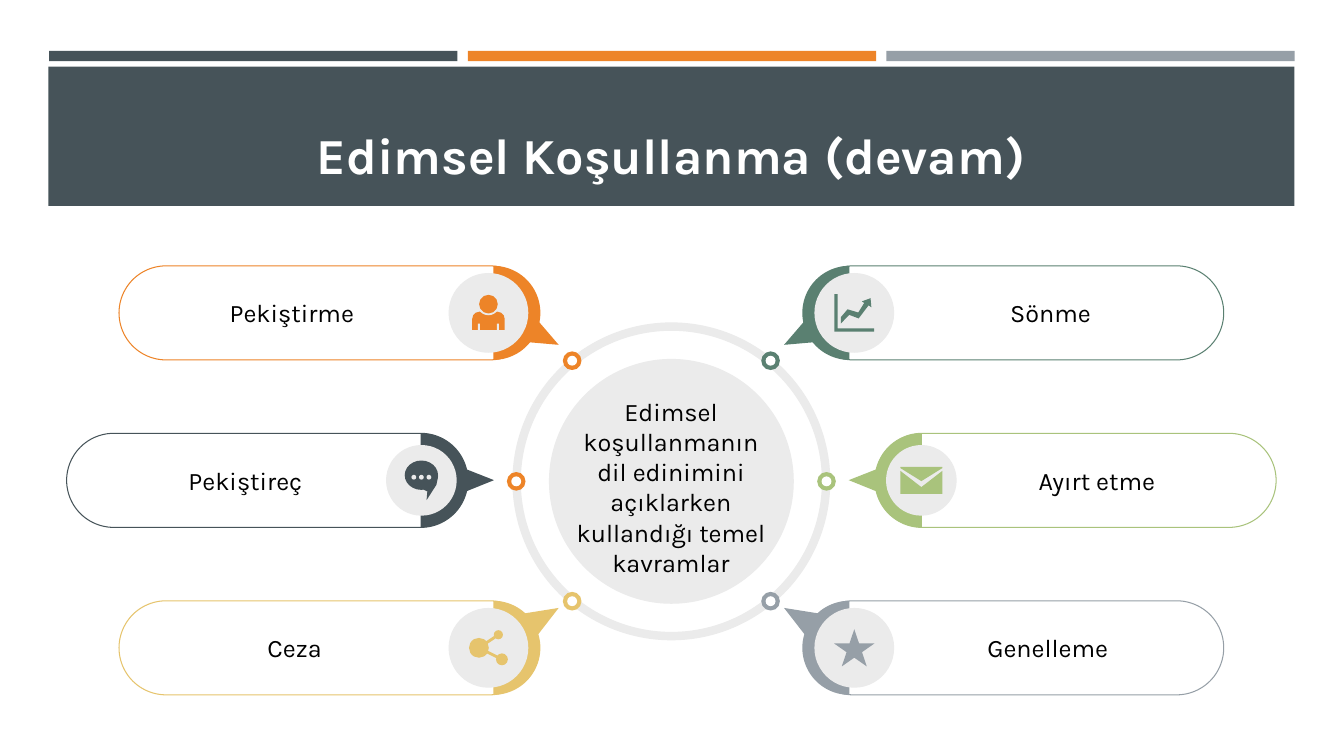
from dataclasses import dataclass

import pptx
import pptx.dml.color
import pptx.enum.shapes
import pptx.enum.text
import pptx.oxml.ns
import pptx.util
from lxml import etree

Cm = pptx.util.Cm
SHAPE = pptx.enum.shapes.MSO_SHAPE
ANCHOR = pptx.enum.text.MSO_ANCHOR


@dataclass(frozen=True)
class Theme:
    font: str = "Karla"
    title_size: int = 36
    body_size: int = 18
    slate: str = "465359"
    orange: str = "ED8428"
    grey: str = "969FA7"
    green: str = "5A8071"
    lime: str = "A9C37C"
    yellow: str = "E6C46D"
    pale: str = "EBEBEB"
    white: str = "FFFFFF"
    black: str = "000000"


THEME = Theme()
AXIS, MIDDLE = 16.92, 12.13  # centre of the ring
PILL_HEIGHT = 2.37

# Distances run outwards from the axis; pointer heights run from the pill top.
ROWS = [
    dict(top=6.7, pill=3.4, width=10.52, cap=3.3, disc=4.61, disc_size=2.01, label=9.56,
         dot=(2.5, 9.09), pointer=[(3.45, 1.28), (2.84, 1.99), (3.76, 1.91)]),
    dict(top=10.92, pill=5.13, width=10.11, cap=5.13, disc=6.3, disc_size=1.78, label=10.73,
         dot=(3.91, MIDDLE), pointer=[(5.46, 0.79), (4.47, 1.18), (5.46, 1.58)]),
    dict(top=15.14, pill=3.4, width=10.52, cap=3.3, disc=4.61, disc_size=2.01, label=9.49,
         dot=(2.5, 15.15), pointer=[(3.78, 0.33), (2.84, 0.18), (3.43, 0.94)]),
]


def rgb(colour):
    return pptx.dml.color.RGBColor.from_string(colour)


def paint(shape, fill=None, line=None, line_width=0.75):
    shape.shadow.inherit = False
    if fill:
        shape.fill.solid()
        shape.fill.fore_color.rgb = rgb(fill)
    else:
        shape.fill.background()
    if line:
        shape.line.color.rgb = rgb(line)
        shape.line.width = pptx.util.Pt(line_width)
    else:
        shape.line.fill.background()


def add_box(slide, preset, left, top, width, height, adjust=(), **colours):
    shape = slide.shapes.add_shape(preset, Cm(left), Cm(top), Cm(width), Cm(height))
    for index, value in enumerate(adjust):
        shape.adjustments[index] = value
    paint(shape, **colours)


def add_centred(slide, preset, x, y, width, height, adjust=(), **colours):
    add_box(slide, preset, x - width / 2, y - height / 2, width, height, adjust, **colours)


def add_circle(slide, x, y, size, **colours):
    add_centred(slide, SHAPE.OVAL, x, y, size, size, **colours)


def add_polygon(slide, x, y, points, colour):
    corners = [(Cm(x + dx), Cm(y + dy)) for dx, dy in points]
    outline = slide.shapes.build_freeform(*corners[0], scale=1.0)
    outline.add_line_segments(corners[1:], close=True)
    paint(outline.convert_to_shape(), fill=colour)


def add_link(slide, start, end, colour):
    link = slide.shapes.add_connector(
        pptx.enum.shapes.MSO_CONNECTOR.STRAIGHT, *(Cm(v) for v in (*start, *end)))
    link.line.color.rgb = rgb(colour)
    link.line.width = pptx.util.Pt(2)
    etree.SubElement(link._element.spPr, pptx.oxml.ns.qn("a:effectLst"))


def add_text(slide, text, left, top, width, height, anchor, colour=THEME.black,
             size=THEME.body_size, bold=False, inset=0.33):
    frame = slide.shapes.add_textbox(Cm(left), Cm(top), Cm(width), Cm(height)).text_frame
    frame_format = dict(word_wrap=True, vertical_anchor=anchor, margin_left=Cm(inset),
                        margin_right=Cm(inset), margin_top=Cm(inset), margin_bottom=Cm(inset))
    for name, value in frame_format.items():
        setattr(frame, name, value)
    paragraph = frame.paragraphs[0]
    paragraph.alignment = pptx.enum.text.PP_ALIGN.CENTER
    run = paragraph.add_run()
    run.text = text
    font_format = dict(name=THEME.font, size=pptx.util.Pt(size), bold=bold)
    for name, value in font_format.items():
        setattr(run.font, name, value)
    run.font.color.rgb = rgb(colour)


# Icons, each drawn around the centre of its disc
def person_icon(slide, x, y, colour):
    add_centred(slide, SHAPE.ROUND_2_SAME_RECTANGLE, x, y + 0.2, 0.82, 0.46, (0.4, 0), fill=colour)
    add_circle(slide, x, y - 0.22, 0.56, fill=THEME.pale)
    add_circle(slide, x, y - 0.22, 0.47, fill=colour)
    for dx in (-0.24, 0.24):
        add_centred(slide, SHAPE.RECTANGLE, x + dx, y + 0.36, 0.05, 0.18, fill=THEME.pale)


def chat_icon(slide, x, y, colour):
    add_centred(slide, SHAPE.OVAL, x, y - 0.13, 0.84, 0.74, fill=colour)
    add_polygon(slide, x, y, [(0.05, 0.23), (0.15, 0.28), (0.13, 0.5), (0.38, 0.11),
                              (0.42, -0.1)], colour)
    for dx in (-0.19, 0, 0.19):
        add_circle(slide, x + dx, y - 0.08, 0.12, fill=THEME.pale)


def share_icon(slide, x, y, colour):
    hub = (x - 0.24, y)
    add_circle(slide, *hub, 0.5, fill=colour)
    for dx, dy, size in ((0.25, -0.33, 0.23), (0.34, 0.29, 0.3)):
        add_link(slide, hub, (x + dx, y + dy), colour)
        add_circle(slide, x + dx, y + dy, size, fill=colour)


def growth_icon(slide, x, y, colour):
    axes = [(-0.5, -0.47), (-0.42, -0.47), (-0.42, 0.39), (0.5, 0.39), (0.5, 0.47), (-0.5, 0.47)]
    arrow = [(0.41, -0.37), (0.19, -0.29), (0.25, -0.25), (0.1, -0.01), (-0.17, -0.09),
             (-0.34, 0.11), (-0.34, 0.27), (-0.13, 0.05), (0.11, 0.14), (0.36, -0.19),
             (0.43, -0.14)]
    for points in (axes, arrow):
        add_polygon(slide, x, y, points, colour)


def envelope_icon(slide, x, y, colour):
    body = [(-0.53, -0.24), (0, 0.17), (0.53, -0.24), (0.53, 0.34), (-0.53, 0.34)]
    flap = [(-0.53, -0.34), (0.53, -0.34), (0.53, -0.31), (0, 0.02), (-0.53, -0.31)]
    for points in (body, flap):
        add_polygon(slide, x, y, points, colour)


def star_icon(slide, x, y, colour):
    add_centred(slide, SHAPE.STAR_5_POINT, x, y, 1.02, 0.94, fill=colour)


def add_concept(slide, side, row, label, colour, dot_colour, draw_icon):
    """Draw one concept; side is -1 left of the axis and 1 right of it."""
    def across(distance):
        return AXIS + side * distance

    top, centre_y = row["top"], row["top"] + PILL_HEIGHT / 2
    dot_x, dot_y = row["dot"]
    for size, fill in ((0.47, dot_colour), (0.25, THEME.white)):
        add_circle(slide, across(dot_x), dot_y, size, fill=fill)
    add_centred(slide, SHAPE.ROUNDED_RECTANGLE, across(row["pill"] + row["width"] / 2), centre_y,
                row["width"], PILL_HEIGHT, (0.5,), line=colour)
    half_turn = (54, 162) if side > 0 else (162, 54)
    add_centred(slide, SHAPE.PIE, across(row["cap"] + PILL_HEIGHT / 2), centre_y,
                PILL_HEIGHT, PILL_HEIGHT, half_turn, fill=colour)
    add_polygon(slide, AXIS, top, [(side * dx, dy) for dx, dy in row["pointer"]], colour)
    add_circle(slide, across(row["disc"]), centre_y, row["disc_size"], fill=THEME.pale)
    draw_icon(slide, across(row["disc"]), centre_y, colour)
    add_text(slide, label, across(row["label"]) - 3.32, centre_y - 0.62, 6.63, 1.24, ANCHOR.MIDDLE)


def main():
    deck = pptx.Presentation()
    deck.slide_width, deck.slide_height = Cm(33.87), Cm(19.05)
    slide = deck.slides.add_slide(deck.slide_layouts[6])

    # Header
    for index, colour in enumerate((THEME.slate, THEME.orange, THEME.grey)):
        add_box(slide, SHAPE.RECTANGLE, 1.24 + index * 10.55, 1.28, 10.29, 0.26, fill=colour)
    add_box(slide, SHAPE.RECTANGLE, 1.22, 1.68, 31.4, 3.51, fill=THEME.slate)
    add_text(slide, "Edimsel Koşullanma (devam)", 1.6, 2.03, 30.63, 2.74, ANCHOR.BOTTOM,
             THEME.white, THEME.title_size, bold=True, inset=0.13)

    # Central ring
    add_circle(slide, AXIS, MIDDLE, 6.17, fill=THEME.pale)
    add_circle(slide, AXIS, MIDDLE, 7.8, line=THEME.pale, line_width=6)
    add_text(slide, "Edimsel koşullanmanın dil edinimini açıklarken kullandığı temel kavramlar",
             14.05, 9.65, 5.72, 3.63, ANCHOR.TOP)

    # Concepts, top to bottom on each side
    left = [("Pekiştirme", THEME.orange, THEME.orange, person_icon),
            ("Pekiştireç", THEME.slate, THEME.orange, chat_icon),
            ("Ceza", THEME.yellow, THEME.yellow, share_icon)]
    right = [("Sönme", THEME.green, THEME.green, growth_icon),
             ("Ayırt etme", THEME.lime, THEME.lime, envelope_icon),
             ("Genelleme", THEME.grey, THEME.grey, star_icon)]
    for side, concepts in ((-1, left), (1, right)):
        for row, concept in zip(ROWS, concepts):
            add_concept(slide, side, row, *concept)

    deck.save("out.pptx")


if __name__ == "__main__":
    main()
